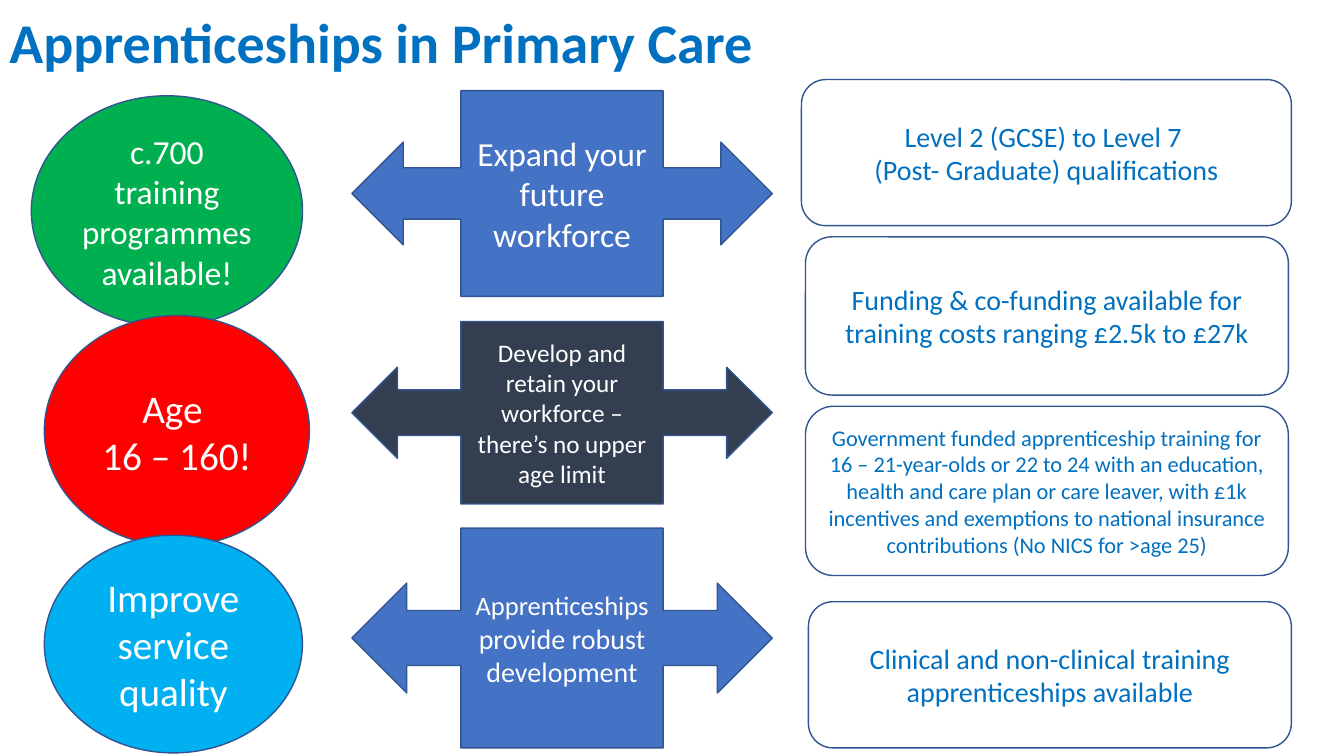
import pptx
import pptx.dml.color
import pptx.enum.shapes
import pptx.enum.text
import pptx.util

SLIDE_WIDTH = pptx.util.Inches(13.33)
SLIDE_HEIGHT = pptx.util.Inches(7.5)
FONT = "Calibri"
COLOURS = {
    "heading": "0070C0",
    "outline": "325491",
    "white": "FFFFFF",
    "blue": "4472C4",
    "slate": "333F50",
    "green": "00B050",
    "red": "FF0000",
    "sky": "00B0F0",
}
SHAPES = pptx.enum.shapes.MSO_SHAPE

CALLOUT_LEFT, CALLOUT_WIDTH = 26.18, 31.28

DETAILS = [
    (59.63, 10.53, 36.45, 19.33,
     [[("Level 2 (GCSE) to Level 7 ", 20)], [("(Post- Graduate) qualifications", 20)]]),
    (59.93, 31.33, 35.93, 20.93,
     [[("Funding & co-funding available for training costs ranging £2.5k to £27k", 20)]]),
    (59.93, 53.73, 35.93, 22.4,
     [[("Government funded apprenticeship training for 16 – 21-year-olds or 22 to 24 "
        "with an education, health and care plan or care leaver, with £1k incentives "
        "and exemptions to national insurance contributions (No NICS for >age 25)", 16)]]),
    (60.15, 79.6, 35.93, 19.33,
     [[("Clinical and non-clinical training apprenticeships available", 20)]]),
]
BENEFITS = [
    (12, 27.2, "blue", [[("Expand your future workforce", 24)]]),
    (42.53, 24.13, "slate",
     [[("Develop and retain your workforce – there’s no upper age limit", 18)]]),
    (69.87, 29.07, "blue",
     [[("Apprenticeships", 19), (" provide robust development", 20)]]),
]
HEADLINES = [
    (2.33, 12.67, 20.18, 30.53, "green",
     [[("c.700 training ", 24), ("programmes", 23.5), (" available!", 24)]]),
    (3.3, 41.73, 19.73, 30.53, "red", [[("Age ", 28)], [("16 – 160!", 28)]]),
    (3.3, 70.8, 19.2, 28.8, "sky", [[("Improve service quality", 28)]]),
]


def colour(name):
    return pptx.dml.color.RGBColor.from_string(COLOURS[name])


def area(left, top, width, height):
    return (int(SLIDE_WIDTH * left / 100), int(SLIDE_HEIGHT * top / 100),
            int(SLIDE_WIDTH * width / 100), int(SLIDE_HEIGHT * height / 100))


def write(frame, paragraphs, ink, bold=False):
    frame.word_wrap = True
    frame.vertical_anchor = pptx.enum.text.MSO_ANCHOR.MIDDLE
    for index, pieces in enumerate(paragraphs):
        paragraph = frame.add_paragraph() if index else frame.paragraphs[0]
        paragraph.alignment = pptx.enum.text.PP_ALIGN.CENTER
        for wording, size in pieces:
            run = paragraph.add_run()
            run.text = wording
            run.font.name = FONT
            run.font.size = pptx.util.Pt(size)
            run.font.bold = bold
            run.font.color.rgb = colour(ink)


def add_heading(slide, wording):
    heading = slide.shapes.add_textbox(*area(0, 0, 56.7, 12))
    frame = heading.text_frame
    frame.margin_left = frame.margin_right = 0
    write(frame, [[(wording, 40)]], "heading", bold=True)
    frame.paragraphs[0].line_spacing = 0.9


def add_panel(slide, preset, place, paragraphs, ink, fill=None):
    panel = slide.shapes.add_shape(preset, *area(*place))
    panel.shadow.inherit = False
    if fill:
        panel.fill.solid()
        panel.fill.fore_color.rgb = colour(fill)
    else:
        panel.fill.background()
    panel.line.color.rgb = colour("outline")
    panel.line.width = pptx.util.Pt(1)
    write(panel.text_frame, paragraphs, ink)


def main():
    deck = pptx.Presentation()
    deck.slide_width = SLIDE_WIDTH
    deck.slide_height = SLIDE_HEIGHT
    slide = deck.slides.add_slide(deck.slide_layouts[6])

    add_heading(slide, "Apprenticeships in Primary Care")
    for *place, paragraphs in DETAILS:
        add_panel(slide, SHAPES.ROUNDED_RECTANGLE, place, paragraphs, "heading")
    for top, height, fill, paragraphs in BENEFITS:
        place = (CALLOUT_LEFT, top, CALLOUT_WIDTH, height)
        add_panel(slide, SHAPES.LEFT_RIGHT_ARROW_CALLOUT, place, paragraphs, "white", fill)
    for *place, fill, paragraphs in HEADLINES:
        add_panel(slide, SHAPES.OVAL, place, paragraphs, "white", fill)

    deck.save("out.pptx")


if __name__ == "__main__":
    main()
